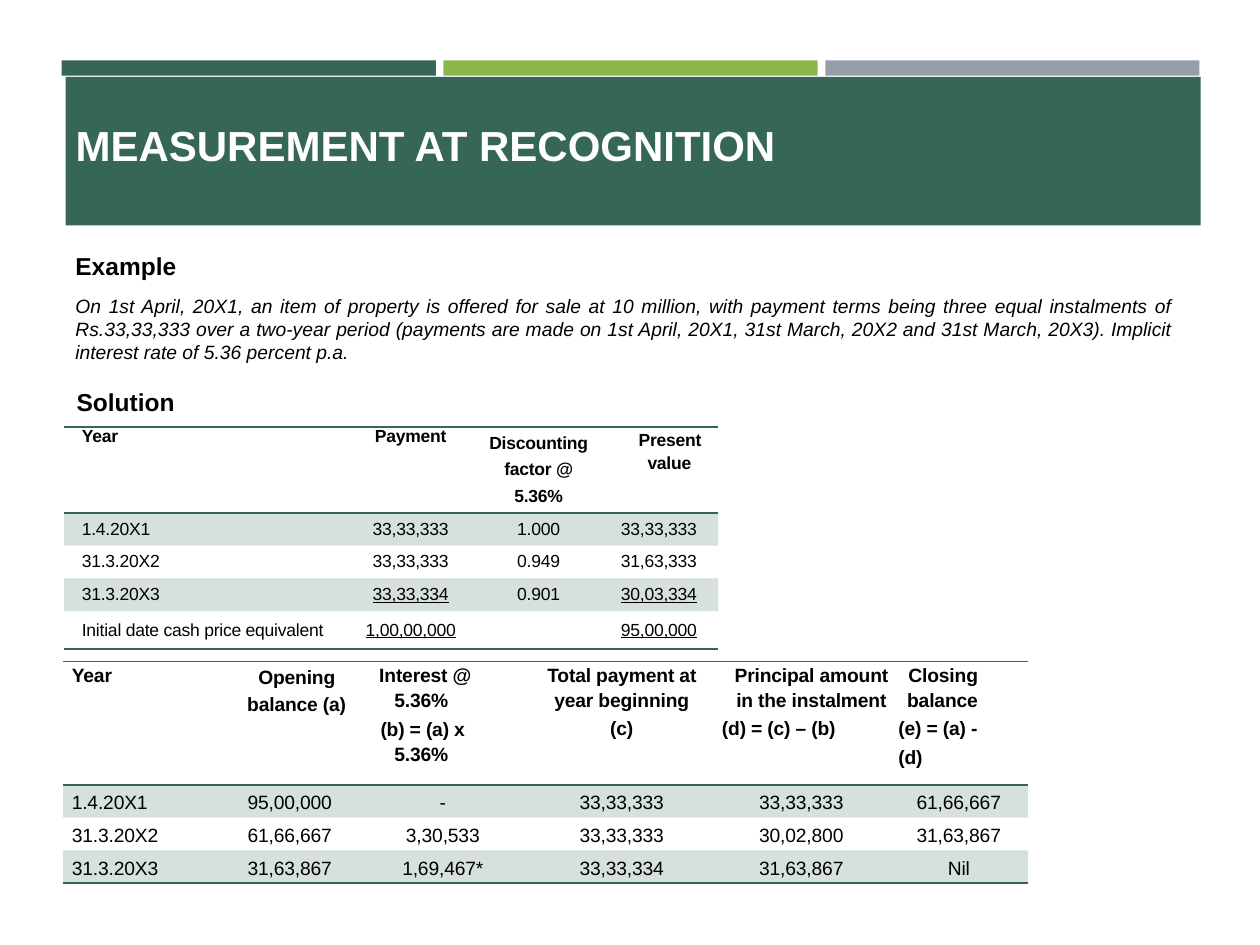
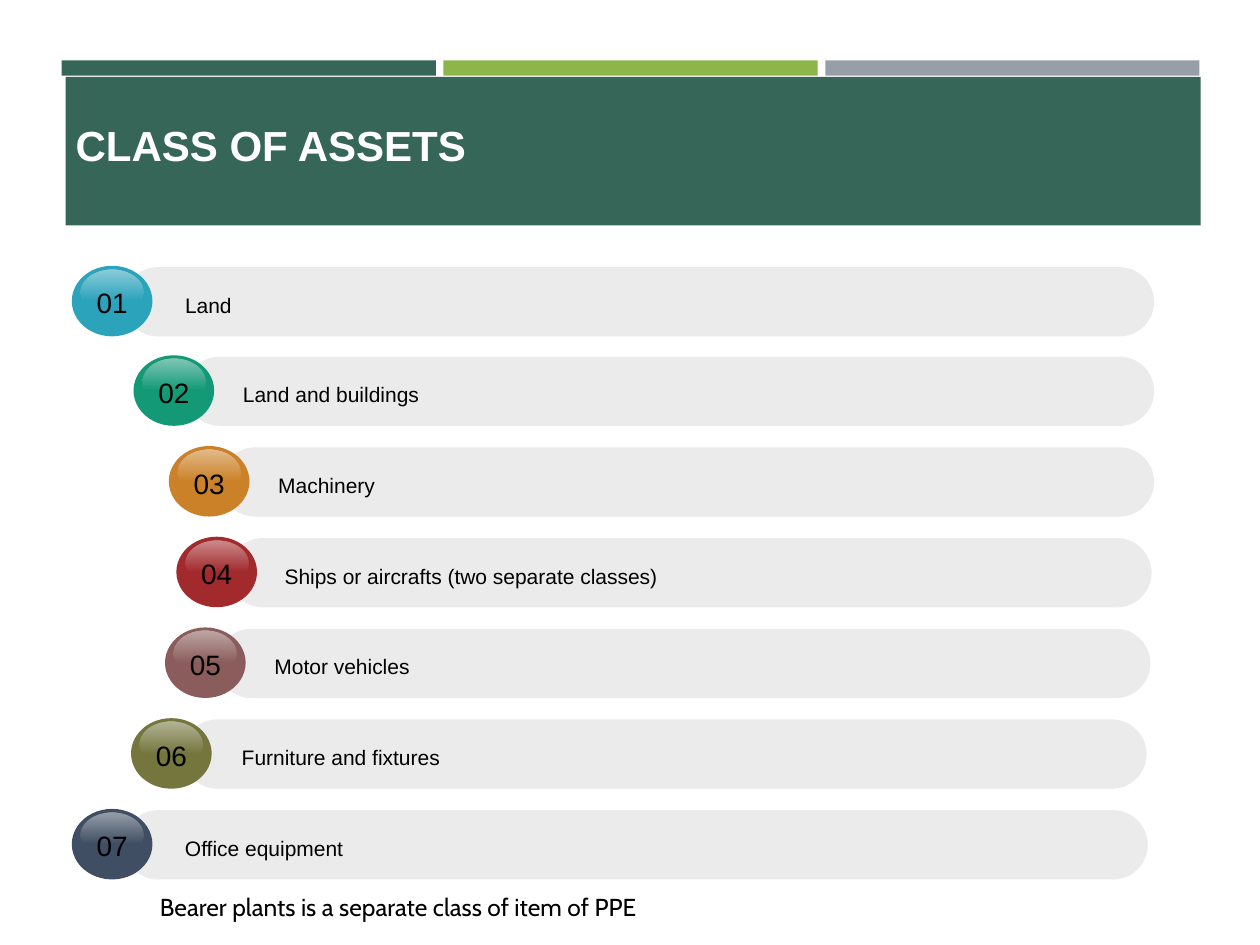
from lxml import etree
from pptx import Presentation
from pptx.dml.color import RGBColor
from pptx.enum.shapes import MSO_SHAPE
from pptx.enum.text import MSO_ANCHOR, MSO_AUTO_SIZE, PP_ALIGN
from pptx.oxml.ns import qn
from pptx.util import Emu, Pt

RECT, ROUND, OVAL = MSO_SHAPE.RECTANGLE, MSO_SHAPE.ROUNDED_RECTANGLE, MSO_SHAPE.OVAL
LEFT, CENTER, JUSTIFY = PP_ALIGN.LEFT, PP_ALIGN.CENTER, PP_ALIGN.JUSTIFY
TOP, MIDDLE = MSO_ANCHOR.TOP, MSO_ANCHOR.MIDDLE
NO_FIT = MSO_AUTO_SIZE.NONE

SCALE = 9144
GREEN, LIME, GREY = "366658", "8CB64A", "969FA7"
PILL, WHITE, BLACK = "EBEBEB", "FFFFFF", "000000"
PLAIN_TABLE = "{2D5ABB26-0587-4C30-8999-92F81FD0307C}"


def px(n):
    return Emu(n * SCALE)


def rgb(value):
    return RGBColor.from_string(value)


def para(text, al=LEFT, left=0, first=0, ls=None, sb=4.3):
    return dict(text=text, al=al, left=left, first=first, ls=ls, sb=sb)


class Deck:
    font = "Arial"

    def __init__(self):
        self.prs = Presentation()
        self.prs.slide_width, self.prs.slide_height = px(1000), px(750)

    def slide(self, title):
        self.s = self.prs.slides.add_slide(self.prs.slide_layouts[5])
        for i, color in enumerate((GREEN, LIME, GREY)):
            self.shape(RECT, 49 + i * 303, 48, 297, 12, color)
        self.shape(RECT, 52, 61, 901, 118, GREEN)
        sp = self.s.shapes.title
        sp.left, sp.top, sp.width, sp.height = px(50), px(52), px(900), px(125)
        self.s.shapes._spTree.append(sp._element)
        tf = sp.text_frame
        tf.auto_size, tf.vertical_anchor = NO_FIT, MIDDLE
        p = tf.paragraphs[0]
        p.alignment = JUSTIFY
        self.run(p, title, 24, WHITE, bold=True)

    def run(self, p, text, size, color=BLACK, font=None, bold=False,
            italic=False, underline=False, spacing=0):
        r = p.add_run()
        r.text = text
        f = r.font
        f.name, f.size = font or self.font, Pt(size)
        f.bold, f.italic, f.underline = bold, italic, underline
        f.color.rgb = rgb(color)
        if spacing:
            r._r.get_or_add_rPr().set("spc", str(spacing))

    def shape(self, kind, x, y, w, h, color):
        sp = self.s.shapes.add_shape(kind, px(x), px(y), px(w), px(h))
        sp.shadow.inherit = False
        sp.fill.solid()
        sp.fill.fore_color.rgb = rgb(color)
        sp.line.fill.background()
        return sp

    def gloss(self, x, y, w, h):
        sp = self.shape(OVAL, x, y, w, h, WHITE)
        sp.fill.gradient()
        sp.fill.gradient_angle = 270
        grad = sp._element.spPr.find(qn("a:gradFill"))
        stops = grad.find(qn("a:gsLst"))
        for gs in list(stops):
            stops.remove(gs)
        for pos, alpha in ((0, 46), (69, 0)):
            gs = etree.SubElement(stops, qn("a:gs"), pos=str(pos * 1000))
            color = etree.SubElement(gs, qn("a:srgbClr"), val=WHITE)
            etree.SubElement(color, qn("a:alpha"), val=str(alpha * 1000))

    def text(self, x, y, w, h, text, size, al=LEFT, ls=None, **style):
        tf = self.s.shapes.add_textbox(px(x), px(y), px(w), px(h)).text_frame
        tf.word_wrap = True
        p = tf.paragraphs[0]
        p.alignment, p.line_spacing = al, ls
        self.run(p, text, size, **style)
        return tf

    def border(self, cell, side):
        ln = etree.SubElement(cell._tc.get_or_add_tcPr(), qn("a:" + side), w="12700")
        fill = etree.SubElement(ln, qn("a:solidFill"))
        etree.SubElement(fill, qn("a:srgbClr"), val=GREEN)

    def cell(self, cell, paras, size, inset, head, band, last, underline):
        cell.margin_left = cell.margin_right = px(inset)
        cell.margin_top = cell.margin_bottom = 0
        cell.vertical_anchor = TOP if head else MIDDLE
        if head:
            self.border(cell, "lnT")
        if head or last:
            self.border(cell, "lnB")
        if band:
            cell.fill.solid()
            cell.fill.fore_color.rgb = rgb(GREEN)
            color = cell._tc.tcPr.find(".//" + qn("a:solidFill") + "[last()]")
            color = cell._tc.tcPr.find(qn("a:solidFill")).find(qn("a:srgbClr"))
            etree.SubElement(color, qn("a:alpha"), val="20000")
        else:
            cell.fill.background()
        tf = cell.text_frame
        for i, item in enumerate(paras):
            p = tf.add_paragraph() if i else tf.paragraphs[0]
            p.alignment, p.line_spacing = item["al"], item["ls"]
            p.space_before = Pt(item["sb"])
            pPr = p._p.get_or_add_pPr()
            pPr.set("marL", str(px(item["left"])))
            pPr.set("indent", str(px(item["first"])))
            self.run(p, item["text"], size, bold=head, underline=underline, spacing=-10)

    def table(self, x, y, cols, head_h, heads, body, lefts, size, inset, ls=None,
              underlined=()):
        rows = len(body) + 1
        frame = self.s.shapes.add_table(rows, len(cols), px(x), px(y), px(sum(cols)),
                                        px(head_h + 26 * len(body)))
        tbl = frame.table
        tbl.first_row = tbl.horz_banding = False
        tbl._tbl.tblPr.find(qn("a:tableStyleId")).text = PLAIN_TABLE
        for col, w in zip(tbl.columns, cols):
            col.width = px(w)
        for i, row in enumerate(tbl.rows):
            row.height = px(26 if i else head_h)
        for c, paras in enumerate(heads):
            self.cell(tbl.cell(0, c), paras, size, inset, True, False, False, False)
        for r, values in enumerate(body, 1):
            for c, value in enumerate(values):
                item = para(value, CENTER if c else LEFT, lefts[c], ls=ls)
                self.cell(tbl.cell(r, c), [item], size, inset, False, r % 2 == 1,
                          r == rows - 1, (r, c) in underlined)


def measurement(deck):
    deck.slide("MEASUREMENT AT RECOGNITION")
    deck.text(51, 302, 926, 40, "Solution", 14, bold=True)
    tf = deck.text(50, 194, 891, 108, "Example", 14, JUSTIFY, bold=True)
    p = tf.add_paragraph()
    p.alignment = JUSTIFY
    deck.run(p, "On 1st April, 20X1, an item of property is offered for sale at 10 million, "
             "with payment terms being three equal instalments of Rs.33,33,333 over a "
             "two-year period (payments are made on 1st April, 20X1, 31st March, 20X2 and "
             "31st March, 20X3). Implicit interest rate of 5.36 percent p.a.", 11, italic=True)
    for p, before in zip(tf.paragraphs, (2.8, 2.2)):
        p.space_before, p.space_after = Pt(before), Pt(6)

    heads = [
        [para("Year", left=7)],
        [para("Payment", CENTER)],
        [para("Discounting factor @ 5.36%", CENTER, 9, ls=Pt(15), sb=2)],
        [para("Present value", left=31, first=-7, ls=1.18, sb=4.4)],
    ]
    body = [
        ("1.4.20X1", "33,33,333", "1.000", "33,33,333"),
        ("31.3.20X2", "33,33,333", "0.949", "31,63,333"),
        ("31.3.20X3", "33,33,334", "0.901", "30,03,334"),
        ("Initial date cash price equivalent", "1,00,00,000", "", "95,00,000"),
    ]
    deck.table(51, 339, (231, 88, 106, 94), 68, heads, body, (7, 0, 9, 0), 10, 7,
               underlined={(3, 1), (3, 3), (4, 1), (4, 3)})

    heads = [
        [para("Year", left=7, ls=1.15)],
        [para("Opening balance (a)", CENTER, 11, ls=1.26, sb=4.4)],
        [para("Interest @ 5.36%", left=23, first=-12, ls=1.18, sb=4.4),
         para("(b) = (a) x 5.36%", left=23, first=-11, ls=1.18, sb=1.9)],
        [para("Total payment at year beginning", CENTER, 8, ls=1.18, sb=4.4),
         para("(c)", CENTER, 8, ls=1.15, sb=1.9)],
        [para("Principal amount in the instalment", CENTER, 16, ls=1.18, sb=4.4),
         para("(d) = (c) – (b)", left=7, ls=1.15, sb=1.9)],
        [para("Closing balance", left=14, first=1, ls=1.18, sb=4.4),
         para("(e) = (a) -", left=7, ls=1.15, sb=1.9),
         para("(d)", left=7, ls=1.15, sb=2.4)],
    ]
    body = [
        ("1.4.20X1", "95,00,000", "-", "33,33,333", "33,33,333", "61,66,667"),
        ("31.3.20X2", "61,66,667", "3,30,533", "33,33,333", "30,02,800", "31,63,867"),
        ("31.3.20X3", "31,63,867", "1,69,467*", "33,33,334", "31,63,867", "Nil"),
    ]
    deck.table(50, 525, (120, 120, 123, 153, 140, 110), 98, heads, body,
               (7, 0, 0, 8, 0, 0), 11, 0, ls=1.15)


def assets(deck):
    deck.slide("CLASS OF ASSETS")
    classes = [
        ("Land", "2BA3BB", 57, 137, 916),
        ("Land and buildings", "139976", 106, 183, 916),
        ("Machinery", "CB8127", 134, 211, 916),
        ("Ships or aircrafts (two separate classes)", "A22A2C", 140, 216, 914),
        ("Motor vehicles", "8A5D5C", 131, 208, 913),
        ("Furniture and fixtures", "75763E", 104, 182, 910),
        ("Office equipment", "3F4E63", 57, 137, 911),
    ]
    for i, (label, color, badge, label_x, right) in enumerate(classes):
        y = 212 + 431 * i // 6
        pill = deck.shape(ROUND, badge + 41, y, right - badge - 41, 55, PILL)
        pill.adjustments[0] = 0.5
        deck.text(label_x, y + 5, right - label_x, 37, label, 12, ls=1.5)
        deck.shape(OVAL, badge, y - 1, 64, 56, color)
        deck.gloss(badge + 7, y + 2, 50, 36)
        deck.text(badge + 8, y + 10, 48, 37, f"{i + 1:02}", 16, CENTER)
    deck.text(117, 703, 609, 34, "Bearer plants is a separate class of item of PPE", 14,
              font="Cabin")


def main():
    deck = Deck()
    measurement(deck)
    assets(deck)
    deck.prs.save("out.pptx")


if __name__ == "__main__":
    main()
